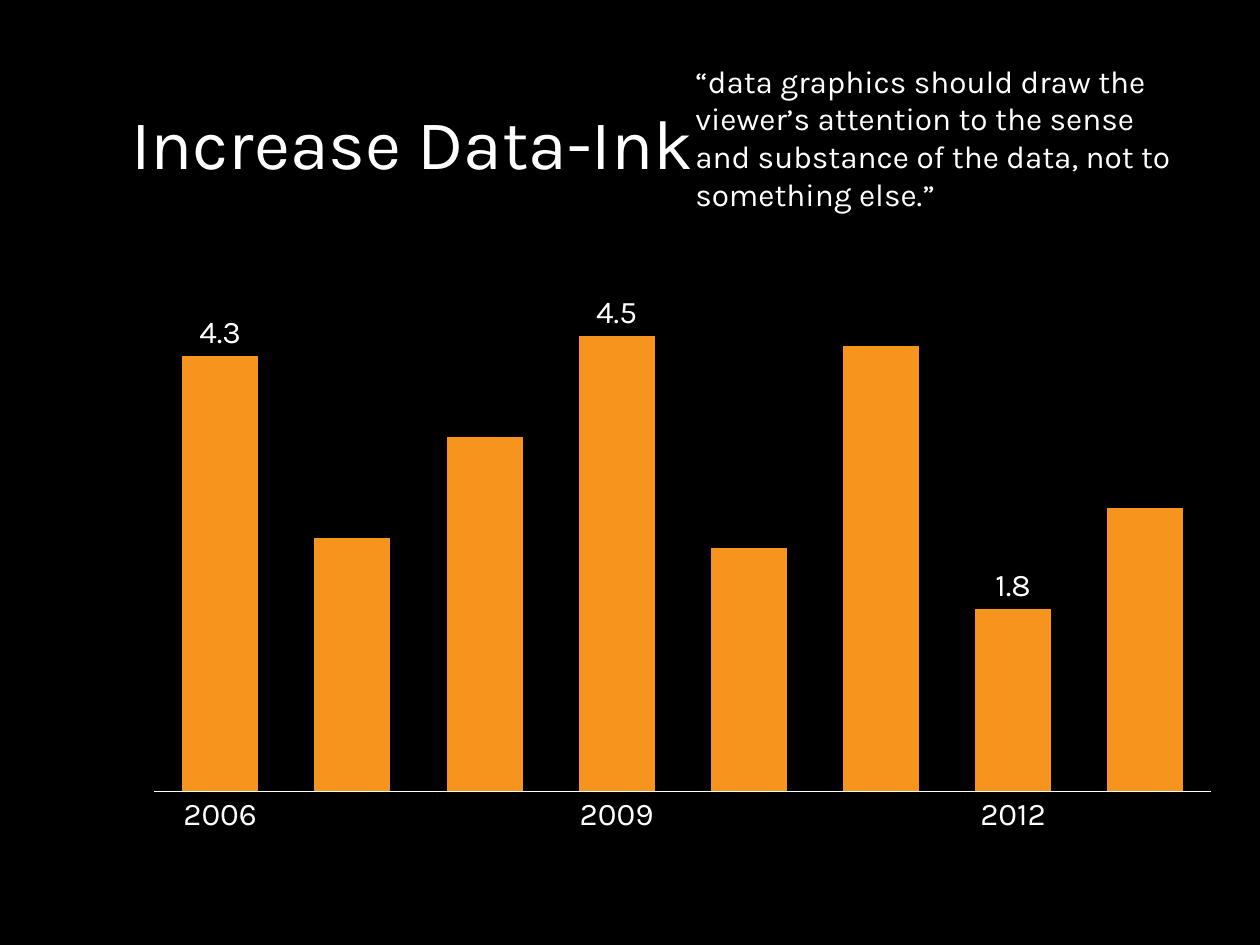
from lxml import etree
from pptx import Presentation
from pptx.chart.data import CategoryChartData
from pptx.dml.color import RGBColor
from pptx.enum.chart import XL_CHART_TYPE, XL_LABEL_POSITION, XL_TICK_MARK
from pptx.enum.text import MSO_ANCHOR, PP_ALIGN
from pptx.util import Inches, Pt

COLUMNS = XL_CHART_TYPE.COLUMN_CLUSTERED
OUTSIDE = XL_LABEL_POSITION.OUTSIDE_END
NO_TICK = XL_TICK_MARK.NONE
MIDDLE = MSO_ANCHOR.MIDDLE
LEFT = PP_ALIGN.LEFT

FONT = "Karla"
BLACK, WHITE, ORANGE = "000000", "FFFFFF", "F7941E"

YEARS = ["2006", "", "", "2009", "", "", "2012", ""]
VALUES = [4.3, 2.5, 3.5, 4.5, 2.4, 4.4, 1.8, 2.8]
QUOTE = ("“data graphics should draw the viewer’s attention to the sense "
         "and substance of the data, not to something else.”")


def rgb(color):
    return RGBColor.from_string(color)


def style_font(font, size):
    font.name = FONT
    font.size = Pt(size)
    font.bold = False
    font.color.rgb = rgb(WHITE)


def set_text(tf, text, size):
    tf.text = text
    tf.word_wrap = True
    p = tf.paragraphs[0]
    p.alignment = LEFT
    style_font(p.runs[0].font, size)


def add_title(s, text):
    sp = s.shapes.title
    sp.left, sp.top, sp.width, sp.height = (
        Inches(1), Inches(0.75), Inches(9), Inches(0.75))
    tf = sp.text_frame
    set_text(tf, text, 40)
    tf.vertical_anchor = MIDDLE
    tf.margin_left = tf.margin_right = Inches(0.04)
    tf.margin_top = tf.margin_bottom = Inches(0.04)


def add_quote(s, text):
    sp = s.shapes.add_textbox(Inches(5.42), Inches(0.44), Inches(4.17), Inches(1.31))
    set_text(sp.text_frame, text, 18)


def place_plot(chart, **fractions):
    """Fix the inner plot area as fractions of the chart frame."""
    plot_area = chart.plots[0]._element.getparent()
    ns = etree.QName(plot_area).namespace
    for old in plot_area.findall(f"{{{ns}}}layout"):
        plot_area.remove(old)
    layout = etree.Element(f"{{{ns}}}layout")
    manual = etree.SubElement(layout, f"{{{ns}}}manualLayout")
    settings = {"layoutTarget": "inner", "xMode": "edge", "yMode": "edge", **fractions}
    for name, value in settings.items():
        etree.SubElement(manual, f"{{{ns}}}{name}").set("val", str(value))
    plot_area.insert(0, layout)


def add_column_chart(s):
    data = CategoryChartData(number_format="0.0")
    data.categories = YEARS
    data.add_series("Series 1", VALUES)
    chart = s.shapes.add_chart(COLUMNS, Inches(1.04), Inches(2.17),
                               Inches(8.74), Inches(5.02), data).chart
    chart.has_legend = False
    chart.has_title = False
    style_font(chart.font, 18)
    place_plot(chart, x=0.021, y=0.019, w=0.96, h=0.8)

    # Axes: only the baseline and the years show
    years = chart.category_axis
    years.major_tick_mark = years.minor_tick_mark = NO_TICK
    years.format.line.color.rgb = rgb(WHITE)
    years.format.line.width = Pt(0.75)
    scale = chart.value_axis
    scale.minimum_scale, scale.maximum_scale = 0, 5
    scale.has_major_gridlines = False
    scale.visible = False

    # Columns, with a value above each labelled year
    plot = chart.plots[0]
    plot.gap_width = 74
    plot.vary_by_categories = False
    series = plot.series[0]
    series.format.fill.solid()
    series.format.fill.fore_color.rgb = rgb(ORANGE)
    for i, year in enumerate(YEARS):
        if year:
            label = series.points[i].data_label
            style_font(label.font, 18)
            label.position = OUTSIDE


def main():
    prs = Presentation()
    prs.slide_width, prs.slide_height = Inches(10), Inches(7.5)
    s = prs.slides.add_slide(prs.slide_layouts[5])
    s.background.fill.solid()
    s.background.fill.fore_color.rgb = rgb(BLACK)

    add_title(s, "Increase Data-Ink")
    add_column_chart(s)
    add_quote(s, QUOTE)
    prs.save("out.pptx")


if __name__ == "__main__":
    main()
